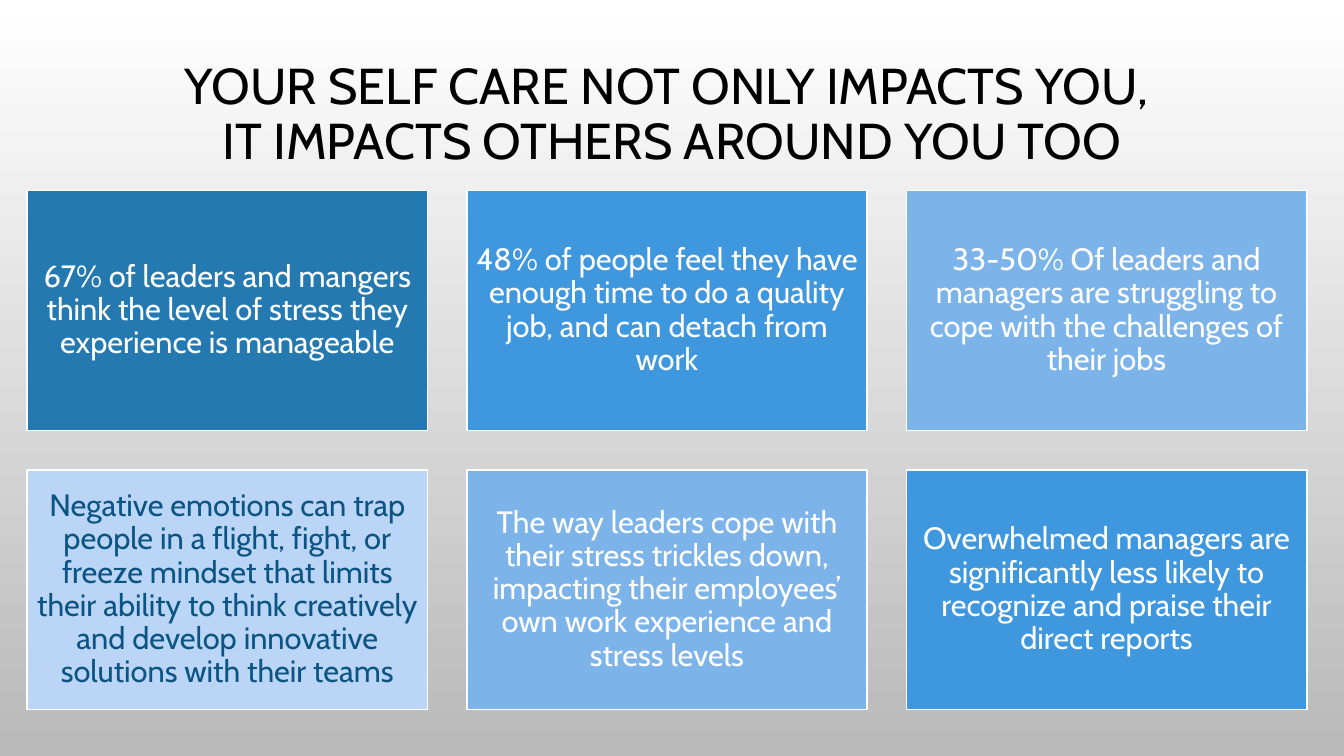
from pptx import Presentation
from pptx.dml.color import RGBColor
from pptx.enum.shapes import MSO_SHAPE
from pptx.enum.text import MSO_ANCHOR, PP_ALIGN
from pptx.util import Pt

PX = 9144  # EMU per px, 100 px to the inch
COLORS = {
    "black": "000000", "white": "FFFFFF", "gray": "B9B9B9", "navy": "0B5484",
    "deep": "2379B0", "bright": "3F97DD", "soft": "7CB4EA", "pale": "BAD5F5",
}
TITLE = "YOUR SELF CARE NOT ONLY IMPACTS YOU, \vIT IMPACTS OTHERS AROUND YOU TOO"
CARDS = [
    ("deep", "white", "67% of leaders and mangers think the level of stress they "
     "experience is manageable"),
    ("bright", "white", "48% of people feel they have enough time to do a quality job, "
     "and can detach from work"),
    ("soft", "white", "33-50% Of leaders and managers are struggling to cope with the "
     "challenges of their jobs"),
    ("pale", "navy", "Negative emotions can trap people in a flight, fight, or freeze "
     "mindset that limits their ability to think creatively and develop innovative "
     "solutions with their teams"),
    ("soft", "white", "The way leaders cope with their stress trickles down, impacting "
     "their employees’ own work experience and stress levels"),
    ("bright", "white", "Overwhelmed managers are significantly less likely to "
     "recognize and praise their direct reports"),
]
COLUMNS = 3
CARD_LEFT, CARD_TOP = 27, 189
CARD_WIDTH, CARD_HEIGHT = 397, 238
COLUMN_STEP, ROW_STEP = 436, 277


def rgb(name):
    return RGBColor.from_string(COLORS[name])


class Page:
    font = "Cabin"
    line_spacing = 0.9

    def __init__(self, deck):
        self.slide = deck.slides.add_slide(deck.slide_layouts[6])

    def background(self, top, bottom):
        fill = self.slide.background.fill
        fill.gradient()
        fill.gradient_angle = 270
        for stop, position, name in zip(fill.gradient_stops, (0, 1), (top, bottom)):
            stop.position = position
            stop.color.rgb = rgb(name)

    def centered_text(self, shape, text, size, color, inset):
        """Put centred text into a shape, with insets given in px."""
        frame = shape.text_frame
        frame.text = text
        frame.word_wrap = True
        frame.vertical_anchor = MSO_ANCHOR.MIDDLE
        frame.margin_left = frame.margin_right = inset * PX
        frame.margin_top = frame.margin_bottom = inset * PX
        for para in frame.paragraphs:
            para.alignment = PP_ALIGN.CENTER
            para.line_spacing = self.line_spacing
            for span in para.runs:
                span.font.name = self.font
                span.font.size = Pt(size)
                span.font.color.rgb = rgb(color)

    def title(self, left, top, width, height, text):
        box = self.slide.shapes.add_textbox(left * PX, top * PX, width * PX, height * PX)
        self.centered_text(box, text, 36, "black", 5)

    def card(self, left, top, width, height, fill, color, text):
        card = self.slide.shapes.add_shape(
            MSO_SHAPE.RECTANGLE, left * PX, top * PX, width * PX, height * PX)
        card.shadow.inherit = False
        card.fill.solid()
        card.fill.fore_color.rgb = rgb(fill)
        card.line.color.rgb = rgb("white")
        card.line.width = Pt(1.25)
        self.centered_text(card, text, 22, color, 9)


def main():
    deck = Presentation()
    deck.slide_width, deck.slide_height = 1333 * PX, 750 * PX
    page = Page(deck)
    page.background("white", "gray")
    page.title(100, 55, 1133, 120, TITLE)
    for index, (fill, color, text) in enumerate(CARDS):
        row, column = divmod(index, COLUMNS)
        page.card(CARD_LEFT + column * COLUMN_STEP, CARD_TOP + row * ROW_STEP,
                  CARD_WIDTH, CARD_HEIGHT, fill, color, text)
    deck.save("out.pptx")


if __name__ == "__main__":
    main()
